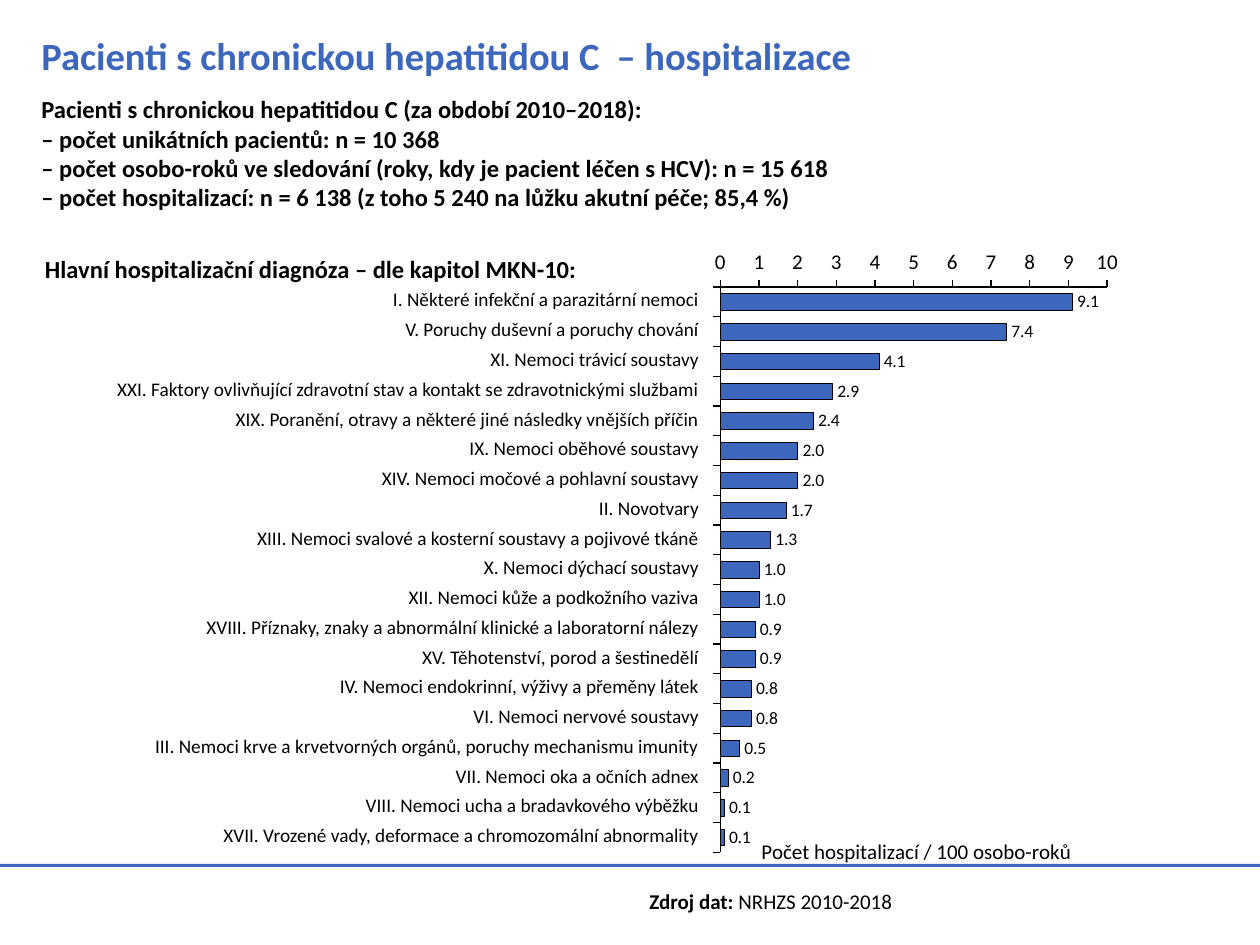
from dataclasses import dataclass

from lxml.etree import SubElement
from pptx import Presentation
from pptx.chart.data import CategoryChartData as ChartData
from pptx.dml.color import RGBColor as Rgb
from pptx.enum.chart import XL_CHART_TYPE as ChartType
from pptx.enum.chart import XL_LABEL_POSITION as LabelPosition
from pptx.enum.chart import XL_TICK_LABEL_POSITION as TickLabels
from pptx.enum.chart import XL_TICK_MARK as TickMark
from pptx.enum.shapes import MSO_SHAPE as Shape
from pptx.enum.text import MSO_ANCHOR as Anchor
from pptx.enum.text import PP_ALIGN as Align
from pptx.oxml.ns import qn
from pptx.util import Emu, Pt


@dataclass(frozen=True)
class Theme:
    """Colours, font and type sizes of the slide."""
    font: str = "Calibri"
    accent: Rgb = Rgb(0x3D, 0x67, 0xBC)
    ink: Rgb = Rgb(0, 0, 0)
    title: int = 22
    body: int = 14
    axis: int = 12
    row: int = 11
    value: int = 10


THEME = Theme()
PX_PER_INCH = 126
TITLE = "Pacienti s chronickou hepatitidou C  – hospitalizace"
SUMMARY = [
    "Pacienti s chronickou hepatitidou C (za období 2010–2018):",
    "– počet unikátních pacientů: n = 10 368",
    "– počet osobo-roků ve sledování (roky, kdy je pacient léčen s HCV): n = 15 618",
    "– počet hospitalizací: n = 6 138 (z toho 5 240 na lůžku akutní péče; 85,4 %)",
]
TABLE_HEADING = "Hlavní hospitalizační diagnóza – dle kapitol MKN-10:"
AXIS_TITLE = "Počet hospitalizací / 100 osobo-roků"
DIAGNOSES = [
    ("I. Některé infekční a parazitární nemoci", 9.1),
    ("V. Poruchy duševní a poruchy chování", 7.4),
    ("XI. Nemoci trávicí soustavy", 4.1),
    ("XXI. Faktory ovlivňující zdravotní stav a kontakt se zdravotnickými službami", 2.9),
    ("XIX. Poranění, otravy a některé jiné následky vnějších příčin", 2.4),
    ("IX. Nemoci oběhové soustavy", 2.0),
    ("XIV. Nemoci močové a pohlavní soustavy", 2.0),
    ("II. Novotvary", 1.7),
    ("XIII. Nemoci svalové a kosterní soustavy a pojivové tkáně", 1.3),
    ("X. Nemoci dýchací soustavy", 1.0),
    ("XII. Nemoci kůže a podkožního vaziva", 1.0),
    ("XVIII. Příznaky, znaky a abnormální klinické a laboratorní nálezy", 0.9),
    ("XV. Těhotenství, porod a šestinedělí", 0.9),
    ("IV. Nemoci endokrinní, výživy a přeměny látek", 0.8),
    ("VI. Nemoci nervové soustavy", 0.8),
    ("III. Nemoci krve a krvetvorných orgánů, poruchy mechanismu imunity", 0.5),
    ("VII. Nemoci oka a očních adnex", 0.2),
    ("VIII. Nemoci ucha a bradavkového výběžku", 0.1),
    ("XVII. Vrozené vady, deformace a chromozomální abnormality", 0.1),
]


def px(length):
    """Turn pixels into EMU."""
    return Emu(round(length * 914400 / PX_PER_INCH))


def style_font(font, size, color=THEME.ink, bold=False):
    """Give a font the theme face, a size, a colour and a weight."""
    font.name, font.size, font.bold = THEME.font, Pt(size), bold
    font.color.rgb = color


def add_span(para, text, size, color=THEME.ink, bold=False):
    """Add one styled run to a paragraph."""
    span = para.add_run()
    span.text = text
    style_font(span.font, size, color, bold)


def add_text(page, box, lines, size, color=THEME.ink, anchor=Anchor.TOP):
    """Place a text box whose lines are lists of (text, bold) spans."""
    frame = page.shapes.add_textbox(*map(px, box)).text_frame
    frame.word_wrap = True
    frame.vertical_anchor = anchor
    for index, spans in enumerate(lines):
        para = frame.add_paragraph() if index else frame.paragraphs[0]
        for text, bold in spans:
            add_span(para, text, size, color, bold)


def add_rule(page, box):
    """Place the coloured bar above the footer."""
    rule = page.shapes.add_shape(Shape.RECTANGLE, *map(px, box))
    rule.shadow.inherit = False
    rule.fill.solid()
    rule.fill.fore_color.rgb = THEME.accent
    rule.line.fill.background()


def style_axis(axis):
    """Give an axis a thin dark line, outer ticks and no gridlines."""
    axis.has_major_gridlines = False
    axis.major_tick_mark = TickMark.OUTSIDE
    axis.minor_tick_mark = TickMark.NONE
    axis.format.line.color.rgb = THEME.ink
    axis.format.line.width = Pt(0.75)


def set_plot_layout(chart, **fractions):
    """Fix the inner plot area as fractions of the chart."""
    area = chart.plots[0]._element.getparent()
    layout = area.find(qn("c:layout"))
    if layout is None:
        layout = SubElement(area, qn("c:layout"))
        area.insert(0, layout)
    manual = SubElement(layout, qn("c:manualLayout"))
    settings = {"layoutTarget": "inner", "xMode": "edge", "yMode": "edge", **fractions}
    for name, value in settings.items():
        SubElement(manual, qn(f"c:{name}")).set("val", str(value))


def add_rate_chart(page, box):
    """Place the bar chart of hospitalisation rates."""
    data = ChartData()
    data.categories = [str(number) for number in range(1, len(DIAGNOSES) + 1)]
    data.add_series("Series 1", [rate for _, rate in DIAGNOSES])
    chart = page.shapes.add_chart(ChartType.BAR_CLUSTERED, *map(px, box), data).chart
    chart.has_legend = chart.has_title = False
    style_font(chart.font, THEME.body)
    set_plot_layout(chart, x=0.045, y=0.118, w=0.904, h=0.854)

    categories, rates = chart.category_axis, chart.value_axis
    style_axis(categories)
    categories.reverse_order = True
    categories.tick_label_position = TickLabels.NONE
    style_axis(rates)
    rates.minimum_scale, rates.maximum_scale, rates.major_unit = 0, 10, 1
    rates.tick_labels.number_format = "#,##0"
    rates.tick_labels.number_format_is_linked = False
    style_font(rates.tick_labels.font, THEME.axis)
    add_span(rates.axis_title.text_frame.paragraphs[0], AXIS_TITLE, THEME.axis)

    plot = chart.plots[0]
    plot.gap_width, plot.overlap, plot.vary_by_categories = 80, -20, False
    bars = plot.series[0].format
    bars.fill.solid()
    bars.fill.fore_color.rgb = THEME.accent
    bars.line.color.rgb = THEME.ink
    bars.line.width = Pt(0.25)
    plot.has_data_labels = True
    labels = plot.data_labels
    labels.show_value = True
    labels.position = LabelPosition.OUTSIDE_END
    labels.number_format = "#,##0.0"
    labels.number_format_is_linked = False
    style_font(labels.font, THEME.value)


def fill_cell(cell, text, size, bold, align, inset):
    """Write one table cell without fill."""
    cell.fill.background()
    cell.vertical_anchor = Anchor.MIDDLE
    cell.margin_left = cell.margin_top = cell.margin_right = px(inset)
    cell.margin_bottom = px(0)
    para = cell.text_frame.paragraphs[0]
    para.alignment = align
    add_span(para, text, size, bold=bold)


def add_diagnosis_table(page, box, heading_height):
    """Place the heading and one equal row for each diagnosis."""
    count = len(DIAGNOSES)
    table = page.shapes.add_table(count + 1, 1, *map(px, box)).table
    table.first_row = table.horz_banding = False
    table.rows[0].height = px(heading_height)
    fill_cell(table.cell(0, 0), TABLE_HEADING, THEME.body, True, Align.LEFT, 0)
    for index, (name, _) in enumerate(DIAGNOSES, 1):
        table.rows[index].height = px((box[3] - heading_height) / count)
        fill_cell(table.cell(index, 0), name, THEME.row, False, Align.RIGHT, 1)


def main():
    """Build the slide and save it."""
    deck = Presentation()
    deck.slide_width, deck.slide_height = px(1260), px(945)
    page = deck.slides.add_slide(deck.slide_layouts[6])
    add_rule(page, (0, 864, 1260, 3))
    add_text(page, (29, 24, 1221, 63), [[(TITLE, True)]], THEME.title, THEME.accent, Anchor.MIDDLE)
    add_text(page, (29, 88, 1153, 131), [[(line, True)] for line in SUMMARY], THEME.body)
    add_rate_chart(page, (701, 209, 428, 662))
    add_diagnosis_table(page, (45, 255, 655, 596), 30)
    source = [("Zdroj dat: ", True), ("NRHZS 2010-2018", False)]
    add_text(page, (637, 882, 590, 38), [source], THEME.axis)
    deck.save("out.pptx")


if __name__ == "__main__":
    main()
